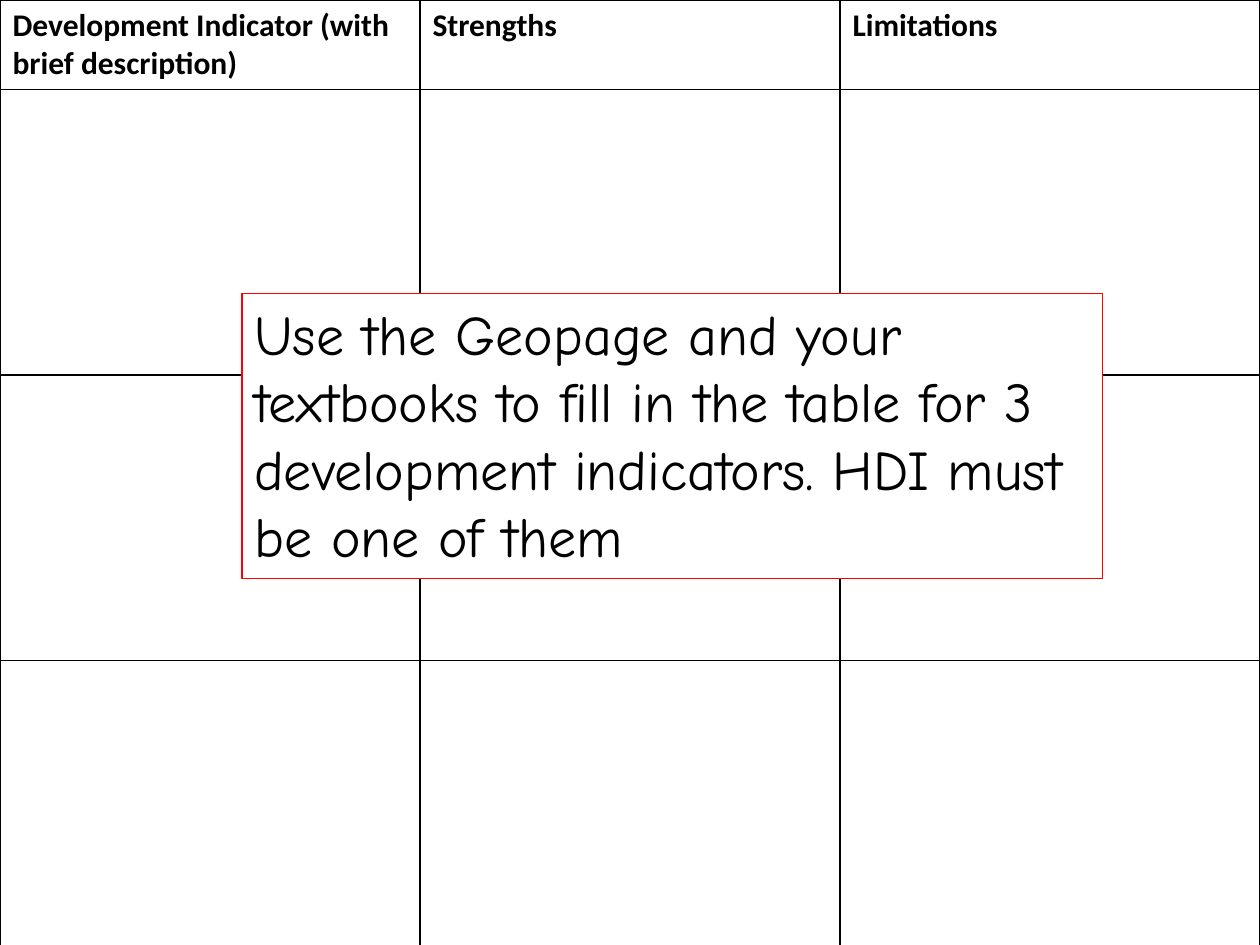
from dataclasses import dataclass
from lxml.etree import SubElement
from pptx import Presentation
from pptx.dml.color import RGBColor
from pptx.enum.shapes import MSO_SHAPE
from pptx.enum.text import MSO_ANCHOR, MSO_AUTO_SIZE, PP_ALIGN
from pptx.oxml.ns import qn
from pptx.util import Inches, Pt


@dataclass(frozen=True)
class Theme:
    background: str = "FFFF99"
    surface: str = "FFFFFF"
    ink: str = "000000"
    accent: str = "FF0000"
    table_font: str = "Calibri"
    task_font: str = "Comic Neue"
    heading_size: int = 18
    task_size: int = 32
    border: float = 1
    outline: float = 0.75


def paint(fill, color):
    fill.solid()
    fill.fore_color.rgb = RGBColor.from_string(color)


def write(frame, text, **formats):
    para = frame.paragraphs[0]
    para.alignment = PP_ALIGN.LEFT
    span = para.add_run()
    span.text = text
    span.font.color.rgb = RGBColor.from_string(theme.ink)
    for name, value in formats.items():
        setattr(span.font, name, value)


theme = Theme()
headings = ["Development Indicator (with brief description)", "Strengths", "Limitations"]
task = (
    "Use the Geopage and your textbooks to fill in the table for 3 "
    "development indicators. HDI must be one of them"
)

deck = Presentation()
deck.slide_width, deck.slide_height = Inches(10), Inches(7.5)
width, height = deck.slide_width, deck.slide_height
page = deck.slides.add_slide(deck.slide_layouts[6])
paint(page.background.fill, theme.background)

blank_rows = 3
heading_height = Inches(0.7)
blank_height = (height - heading_height) // blank_rows
grid = page.shapes.add_table(blank_rows + 1, len(headings), 0, 0, width, height).table
for column in grid.columns:
    column.width = width // len(headings)
for row in grid.rows:
    row.height = blank_height
grid.rows[0].height = heading_height

for cell in grid.iter_cells():
    properties = cell._tc.get_or_add_tcPr()
    for side in ("a:lnL", "a:lnR", "a:lnT", "a:lnB"):
        edge = SubElement(properties, qn(side), w=str(Pt(theme.border)))
        SubElement(SubElement(edge, qn("a:solidFill")), qn("a:srgbClr"), val=theme.ink)
    paint(cell.fill, theme.surface)

for cell, heading in zip(grid.rows[0].cells, headings):
    write(cell.text_frame, heading, name=theme.table_font, size=Pt(theme.heading_size), bold=True)

box = page.shapes.add_shape(
    MSO_SHAPE.RECTANGLE,
    Inches(1.92), Inches(2.33), Inches(6.83), Inches(2.26),
)
box.shadow.inherit = False
paint(box.fill, theme.surface)
paint(box.line.fill, theme.accent)
box.line.width = Pt(theme.outline)
frame_formats = {
    "word_wrap": True,
    "auto_size": MSO_AUTO_SIZE.SHAPE_TO_FIT_TEXT,
    "vertical_anchor": MSO_ANCHOR.TOP,
}
for name, value in frame_formats.items():
    setattr(box.text_frame, name, value)
write(box.text_frame, task, name=theme.task_font, size=Pt(theme.task_size))

deck.save("out.pptx")
